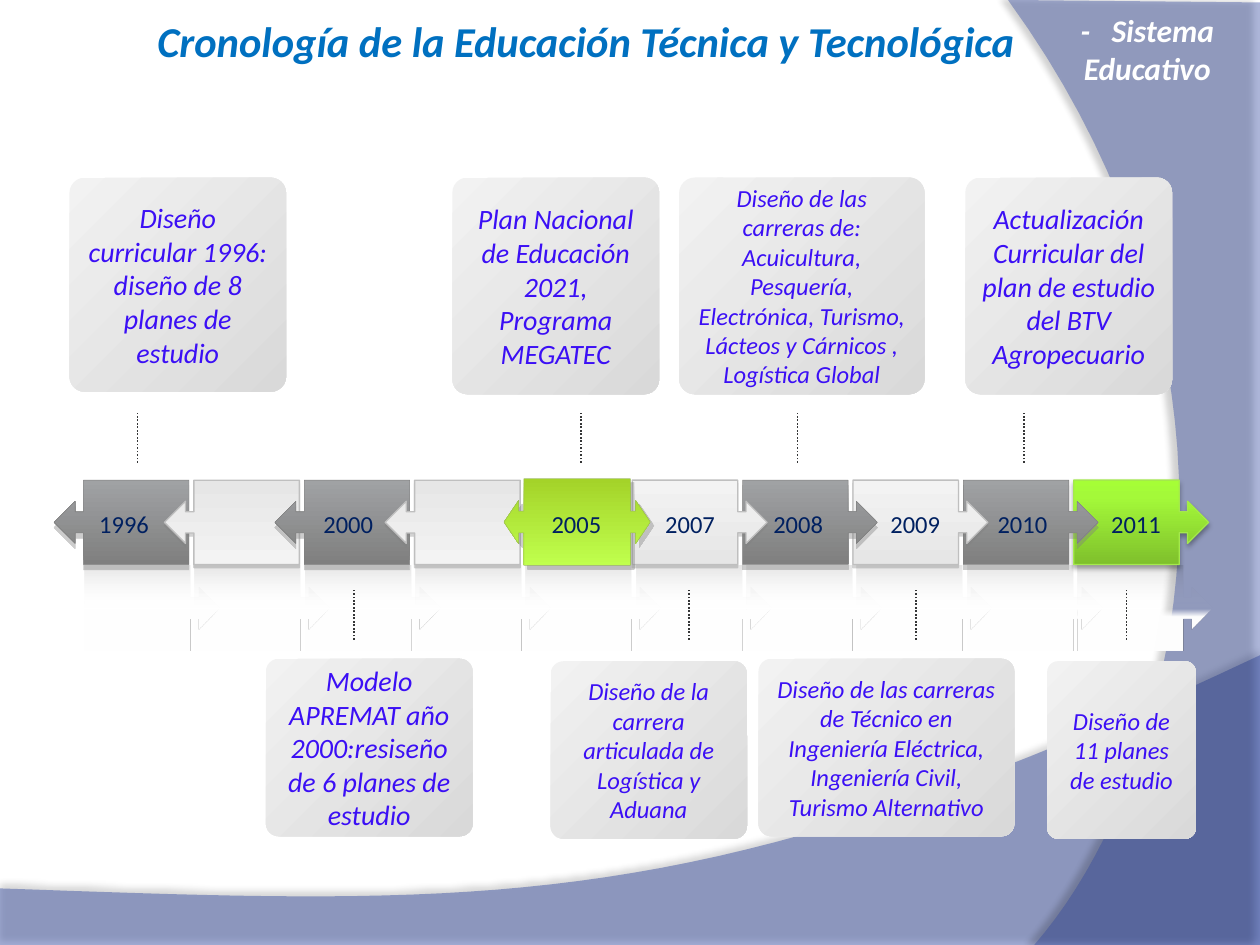
from dataclasses import dataclass
from lxml import etree
from pptx import Presentation
from pptx.dml.color import RGBColor
from pptx.enum.dml import MSO_LINE
from pptx.enum.shapes import MSO_CONNECTOR, MSO_SHAPE
from pptx.enum.text import MSO_ANCHOR, MSO_AUTO_SIZE, PP_ALIGN
from pptx.oxml.ns import qn
from pptx.util import Cm, Pt

DOTS = MSO_LINE.ROUND_DOT
LINE = MSO_CONNECTOR.STRAIGHT
CARD = MSO_SHAPE.ROUNDED_RECTANGLE
ARROW = MSO_SHAPE.RIGHT_ARROW_CALLOUT
DOUBLE = MSO_SHAPE.LEFT_RIGHT_ARROW_CALLOUT
MIDDLE, TOP = MSO_ANCHOR.MIDDLE, MSO_ANCHOR.TOP
FIXED = MSO_AUTO_SIZE.NONE
CENTER, LEFT = PP_ALIGN.CENTER, PP_ALIGN.LEFT


@dataclass(frozen=True)
class Style:
    stops: tuple
    angle: int = 90
    line: str = ""
    width: float = 0.25
    shadow: tuple = ()


@dataclass(frozen=True)
class Theme:
    font: str = "Calibri"
    title: str = "0070C0"
    white: str = "FFFFFF"
    ink: str = "3B0FF5"
    year: str = "002060"
    tick: str = "353637"
    wave: str = "31489F"
    head: float = 24.3
    tag: float = 18
    large: float = 16
    small: float = 14
    card: tuple = ((0, "D9D9D9", 100), (100, "F2F2F2", 100))
    dark: Style = Style(((0, "A0A2A4", 100), (100, "7F7F7F", 100)), 90,
                        "7F7F7F", 0.25, ("808080", 40, 0, 3, 90))
    back: Style = Style(((0, "7F7F7F", 100), (100, "A0A2A4", 100)), 90,
                        "7F7F7F", 0.25, ("808080", 40, 0, 3, 90))
    pale: Style = Style(((0, "F3F3F3", 100), (100, "E6E6E6", 100)), 90,
                        "BFBFBF", 0.75, ("808080", 35, 0, 1.8, 90))
    lime: Style = Style(((0, "A4D329", 100), (100, "C0FF4D", 100)), 90,
                        "9BBB59", 0.25, ("808080", 40, 0, 3, 45))
    green: Style = Style(((0, "7FC02C", 100), (80, "A4F939", 100),
                          (100, "A6FE36", 100)), 270,
                         "A4E94C", 0.75, ("000000", 35, 3.1, 1.8, 90))
    mirror: Style = Style(((0, "020000", 10), (51, "FFFFFF", 0),
                           (60, "FFFFFF", 100)))


THEME = Theme()
STEP = 2.225
UPPER, LOWER = 3.58, 13.28

EVENTS = [
    ("1996", 1.75, 2.77, (1.4, UPPER, 4.37, 4.32), THEME.large,
     "Diseño curricular 1996: diseño de 8 planes de estudio"),
    ("2000", 6.27, 7.14, (5.36, LOWER, 4.17, 3.58), THEME.large,
     "Modelo APREMAT año 2000:resiseño de 6 planes de estudio"),
    ("2005", 10.87, 11.71, (9.12, UPPER, 4.17, 4.37), THEME.large,
     "Plan Nacional de Educación 2021, Programa MEGATEC"),
    ("2007", 13.16, 13.89, (11.1, LOWER + 0.05, 3.96, 3.58), THEME.small,
     "Diseño de la carrera articulada de Logística y Aduana"),
    ("2008", 15.34, 16.08, (13.69, UPPER, 4.95, 4.37), THEME.small,
     "Diseño de las carreras de: Acuicultura, Pesquería, Electrónica, "
     "Turismo, Lácteos y Cárnicos , Logística Global"),
    ("2009", 17.7, 18.47, (15.29, LOWER, 5.16, 3.58), THEME.small,
     "Diseño de las carreras de Técnico en Ingeniería Eléctrica, "
     "Ingeniería Civil, Turismo Alternativo"),
    ("2010", 19.86, 20.65, (19.46, UPPER, 4.17, 4.37), THEME.large,
     "Actualización Curricular del plan de estudio del BTV Agropecuario"),
    ("2011", 22.15, 22.71, (21.11, LOWER + 0.05, 3, 3.58), THEME.small,
     "Diseño de 11 planes de estudio"),
]


def rgb(code):
    return RGBColor.from_string(code)


def node(root, tag, **attrs):
    return etree.SubElement(root, qn(tag), {k: str(v) for k, v in attrs.items()})


def tint(root, code, alpha):
    color = node(root, "a:srgbClr", val=code)
    if alpha < 100:
        node(color, "a:alpha", val=alpha * 1000)


def blend(shape, stops, angle=None):
    shape.fill.gradient()
    grad = shape._element.spPr.find(qn("a:gradFill"))
    for child in list(grad):
        grad.remove(child)
    group = node(grad, "a:gsLst")
    for place, code, alpha in stops:
        tint(node(group, "a:gs", pos=place * 1000), code, alpha)
    if angle is None:
        focus = node(grad, "a:path", path="circle")
        node(focus, "a:fillToRect", l=100000, t=100000)
    else:
        node(grad, "a:lin", ang=angle * 60000, scaled=0)


def shade(shape, code, alpha, blur, gap, angle):
    effects = shape._element.spPr.find(qn("a:effectLst"))
    outer = node(effects, "a:outerShdw", blurRad=Pt(blur), dist=Pt(gap),
                 dir=angle * 60000, algn="ctr", rotWithShape=0)
    tint(outer, code, alpha)


def write(shape, text, size, color, bold=False, slant=False,
          align=CENTER, anchor=MIDDLE, wrap=True):
    frame = shape.text_frame
    frame.text = text
    frame.word_wrap = wrap
    frame.auto_size = FIXED
    frame.vertical_anchor = anchor
    para = frame.paragraphs[0]
    para.alignment = align
    font = para.runs[0].font
    font.name, font.size = THEME.font, Pt(size)
    font.bold, font.italic = bold, slant
    font.color.rgb = rgb(color)
    return para


def place(slide, kind, box, adjust):
    shape = slide.shapes.add_shape(kind, *map(Cm, box))
    for i, value in enumerate(adjust):
        shape.adjustments[i] = value
    shape.shadow.inherit = False
    shape.line.fill.background()
    return shape


def curve(start, one, two, end, count=40):
    for i in range(1, count + 1):
        t = i / count
        u = 1 - t
        yield tuple(u**3 * a + 3 * u * u * t * b + 3 * u * t * t * c + t**3 * d
                    for a, b, c, d in zip(start, one, two, end))


def wave(slide, left, top, corners, bend, alpha, shadow):
    points = [*corners, *curve(corners[-1], *bend)]
    points = [(Cm(left + x), Cm(top + y)) for x, y in points]
    form = slide.shapes.build_freeform(*points[0])
    form.add_line_segments(points[1:], close=True)
    shape = form.convert_to_shape()
    shape.shadow.inherit = False
    shape.line.fill.background()
    shape.fill.solid()
    shape.fill.fore_color.rgb = rgb(THEME.wave)
    color = shape._element.spPr.find(qn("a:solidFill"))[0]
    node(color, "a:alpha", val=alpha * 1000)
    shade(shape, *shadow)


def scene(slide):
    wave(slide, 0, 13.21,
         [(0, 4.7), (0, 5.87), (25.4, 5.87), (25.4, 0)],
         [(14.2, 5.31), (9.93, 5.05), (0, 4.7)],
         45, ("000000", 35, 4, 3.5, 270))
    wave(slide, 20.32, 0,
         [(5.08, 0.05), (5.08, 19.05), (0.53, 19.05)],
         [(3.43, 15.72), (5.54, 7.62), (0, 0)],
         40, ("000000", 45, 4, 4, 180))


def header(slide, left, top, width, height):
    title = slide.shapes.title
    slide.shapes._spTree.append(title._element)
    title.left, title.top = Cm(left), Cm(top)
    title.width, title.height = Cm(width), Cm(height)
    para = write(title, "Cronología de la Educación Técnica y Tecnológica",
                 THEME.head, THEME.title, True, True)
    para.line_spacing = 0.8
    tag = slide.shapes.add_textbox(Cm(left + 18.06), Cm(top + 0.18),
                                   Cm(5.16), Cm(1.8))
    write(tag, "-   Sistema Educativo", THEME.tag, THEME.white,
          True, True, anchor=TOP)


def block(slide, box, style, kind=ARROW, adjust=(0.25, 0.25, 0.25, 0.782)):
    shape = place(slide, kind, box, adjust)
    blend(shape, style.stops, style.angle)
    if style.line:
        shape.line.color.rgb = rgb(style.line)
        shape.line.width = Pt(style.width)
    if style.shadow:
        shade(shape, *style.shadow)
    return shape


def band(slide, left, top, width, height):
    for i in reversed(range(10)):
        block(slide, (left + i * STEP, top + 1.73, width, height), THEME.mirror)
    for i in range(4):
        style = THEME.pale if i % 2 else THEME.back
        shape = block(slide, (left + i * STEP - 0.61, top, width, height), style)
        shape.rotation = 180
    for i in reversed(range(5, 10)):
        style = THEME.green if i == 9 else THEME.pale if i % 2 else THEME.dark
        block(slide, (left + i * STEP - 0.08, top, width, height), style)
    block(slide, (left + 8.46, top - 0.03, 2.95, 1.75), THEME.lime,
          DOUBLE, (0.25, 0.25, 0.169, 0.728))


def event(slide, year, spot, tick, box, size, text):
    label = slide.shapes.add_textbox(Cm(spot), Cm(10.13), Cm(1.52), Cm(0.86))
    write(label, year, THEME.small, THEME.year,
          align=LEFT, anchor=TOP, wrap=False)
    foot = 9.33 if box[1] == UPPER else 12.9
    line = slide.shapes.add_connector(LINE, Cm(tick), Cm(foot),
                                      Cm(tick), Cm(foot - 1))
    line.line.color.rgb = rgb(THEME.tick)
    line.line.width = Pt(1)
    line.line.dash_style = DOTS
    node(line._element.spPr, "a:effectLst")
    card = place(slide, CARD, box, [0.073])
    blend(card, THEME.card)
    write(card, text, size, THEME.ink, slant=True)


def main():
    deck = Presentation()
    deck.slide_width, deck.slide_height = Cm(25.4), Cm(19.05)
    slide = deck.slides.add_slide(deck.slide_layouts[5])
    scene(slide)
    header(slide, 2.49, -0.08, 18.64, 1.98)
    band(slide, 1.7, 9.68, 2.72, 1.7)
    for item in EVENTS:
        event(slide, *item)
    deck.save("out.pptx")


if __name__ == "__main__":
    main()
